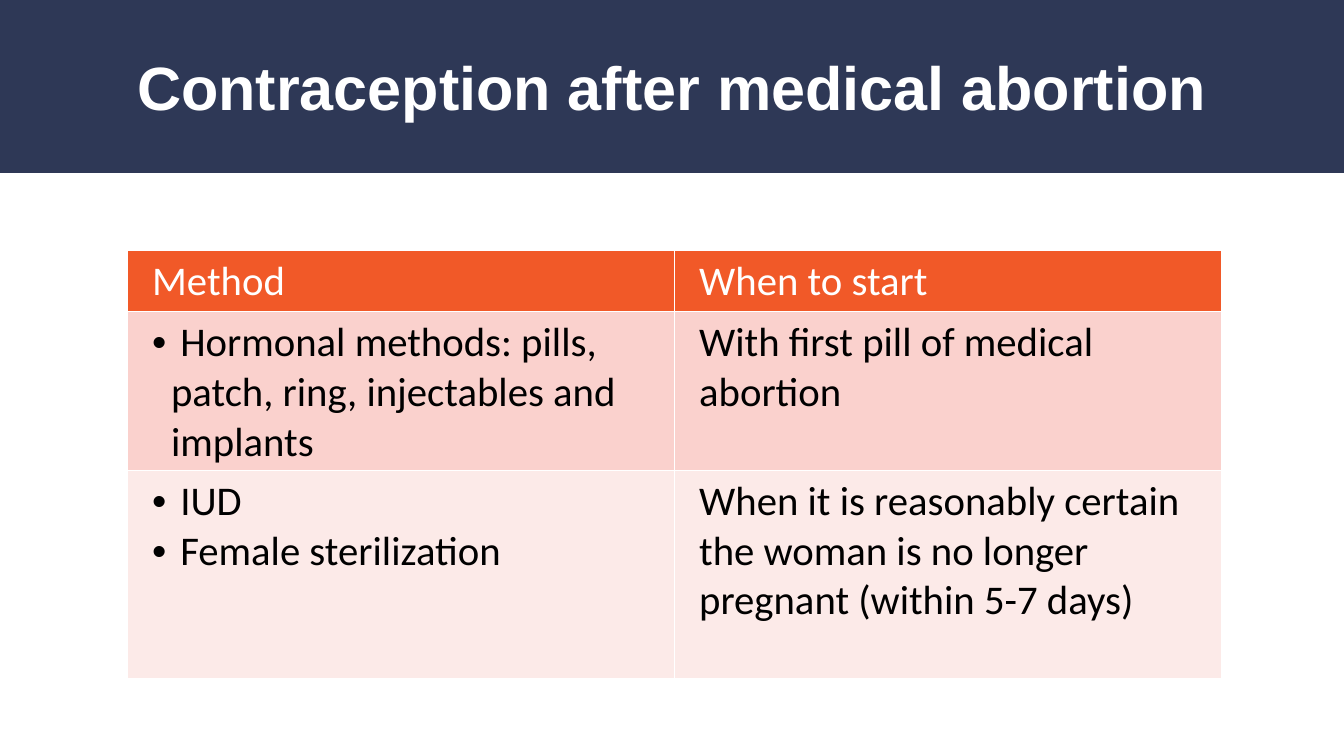
"""Build the slide on contraception after medical abortion."""
from dataclasses import dataclass

from lxml import etree
from pptx import Presentation
from pptx.dml.color import RGBColor
from pptx.enum import shapes, text
from pptx.oxml import ns
from pptx.util import Pt

NAVY = RGBColor(0x2E, 0x38, 0x56)
ORANGE = RGBColor(0xF1, 0x59, 0x28)
ROSE = RGBColor(0xFA, 0xD1, 0xCD)
BLUSH = RGBColor(0xFC, 0xEA, 0xE8)
WHITE = RGBColor(0xFF, 0xFF, 0xFF)
BLACK = RGBColor(0, 0, 0)

SLIDE_W, SLIDE_H = Pt(1583.28), Pt(890.64)
MARGIN = Pt(149.76)
COLUMN_W = Pt(644.4)
TITLE_FONT = {"name": "Arial", "size": Pt(72), "bold": True}
CELL_FONT = {"name": "Calibri", "size": Pt(48), "bold": False}
TITLE_FRAME = {"margin_left": 0, "margin_right": 0, "margin_top": 0,
               "margin_bottom": 0, "word_wrap": True,
               "vertical_anchor": text.MSO_ANCHOR.MIDDLE}
CELL_MARGINS = {"margin_left": Pt(29.52), "margin_right": Pt(29.52),
                "margin_top": Pt(7.2), "margin_bottom": Pt(7.2)}


@dataclass
class MethodRow:
    """One table row: its methods, their start time and its look."""
    methods: list[str]
    start: str
    height: Pt
    fill: RGBColor
    color: RGBColor = BLACK
    bulleted: bool = True


ROWS = [
    MethodRow(["Method"], "When to start", Pt(72), ORANGE, WHITE, False),
    MethodRow([" Hormonal methods: pills, patch, ring, injectables and implants"],
              "With first pill of medical abortion", Pt(187.2), ROSE),
    MethodRow([" IUD", " Female sterilization"],
              "When it is reasonably certain the woman is no longer pregnant "
              "(within 5-7 days)", Pt(244.8), BLUSH),
]


def apply(target, values: dict) -> None:
    """Set every format value on the target."""
    for name, value in values.items():
        setattr(target, name, value)


def add_text(p, content: str, font: dict, color: RGBColor) -> None:
    """Add one formatted run to a paragraph."""
    r = p.add_run()
    r.text = content
    apply(r.font, font)
    r.font.color.rgb = color


def add_bullet(p) -> None:
    """Give a paragraph a hanging bullet."""
    pPr = p._p.get_or_add_pPr()
    indent = Pt(22.32)
    pPr.set("marL", str(indent))
    pPr.set("indent", str(-indent))
    etree.SubElement(pPr, ns.qn("a:buFont"), typeface="Arial")
    etree.SubElement(pPr, ns.qn("a:buChar"), char="•")


def add_borders(cell) -> None:
    """Draw thin white lines around a cell."""
    tcPr = cell._tc.get_or_add_tcPr()
    for side in "LRTB":
        ln = etree.SubElement(tcPr, ns.qn(f"a:ln{side}"), w=str(Pt(1)))
        fill = etree.SubElement(ln, ns.qn("a:solidFill"))
        etree.SubElement(fill, ns.qn("a:srgbClr"), val=str(WHITE))


def fill_cell(cell, lines: list[str], row: MethodRow, bulleted: bool) -> None:
    """Write and format one table cell."""
    apply(cell, CELL_MARGINS)
    add_borders(cell)
    cell.fill.solid()
    cell.fill.fore_color.rgb = row.fill
    tf = cell.text_frame
    for i, line in enumerate(lines):
        p = tf.add_paragraph() if i else tf.paragraphs[0]
        if bulleted:
            add_bullet(p)
        add_text(p, line, CELL_FONT, row.color)


def add_header(s) -> None:
    """Draw the navy band and the slide title."""
    band = s.shapes.add_shape(shapes.MSO_SHAPE.RECTANGLE, 0, 0, SLIDE_W, Pt(203.76))
    band.shadow.inherit = False
    band.fill.solid()
    band.fill.fore_color.rgb = NAVY
    band.line.fill.background()
    sp = s.shapes.add_textbox(MARGIN, Pt(14.4), SLIDE_W - 2 * MARGIN, Pt(174.24))
    tf = sp.text_frame
    apply(tf, TITLE_FRAME)
    p = tf.paragraphs[0]
    p.alignment = text.PP_ALIGN.CENTER
    add_text(p, "Contraception after medical abortion", TITLE_FONT, WHITE)


def add_methods_table(s) -> None:
    """Draw the table of methods and start times."""
    height = sum(row.height for row in ROWS)
    table = s.shapes.add_table(len(ROWS), 2, MARGIN, Pt(295.2),
                               2 * COLUMN_W, height).table
    for column in table.columns:
        column.width = COLUMN_W
    for i, row in enumerate(ROWS):
        table.rows[i].height = row.height
        fill_cell(table.cell(i, 0), row.methods, row, row.bulleted)
        fill_cell(table.cell(i, 1), [row.start], row, False)


def main() -> None:
    """Build and save the presentation."""
    prs = Presentation()
    prs.slide_width, prs.slide_height = SLIDE_W, SLIDE_H
    s = prs.slides.add_slide(prs.slide_layouts[6])
    add_header(s)
    add_methods_table(s)
    prs.save("out.pptx")


if __name__ == "__main__":
    main()
